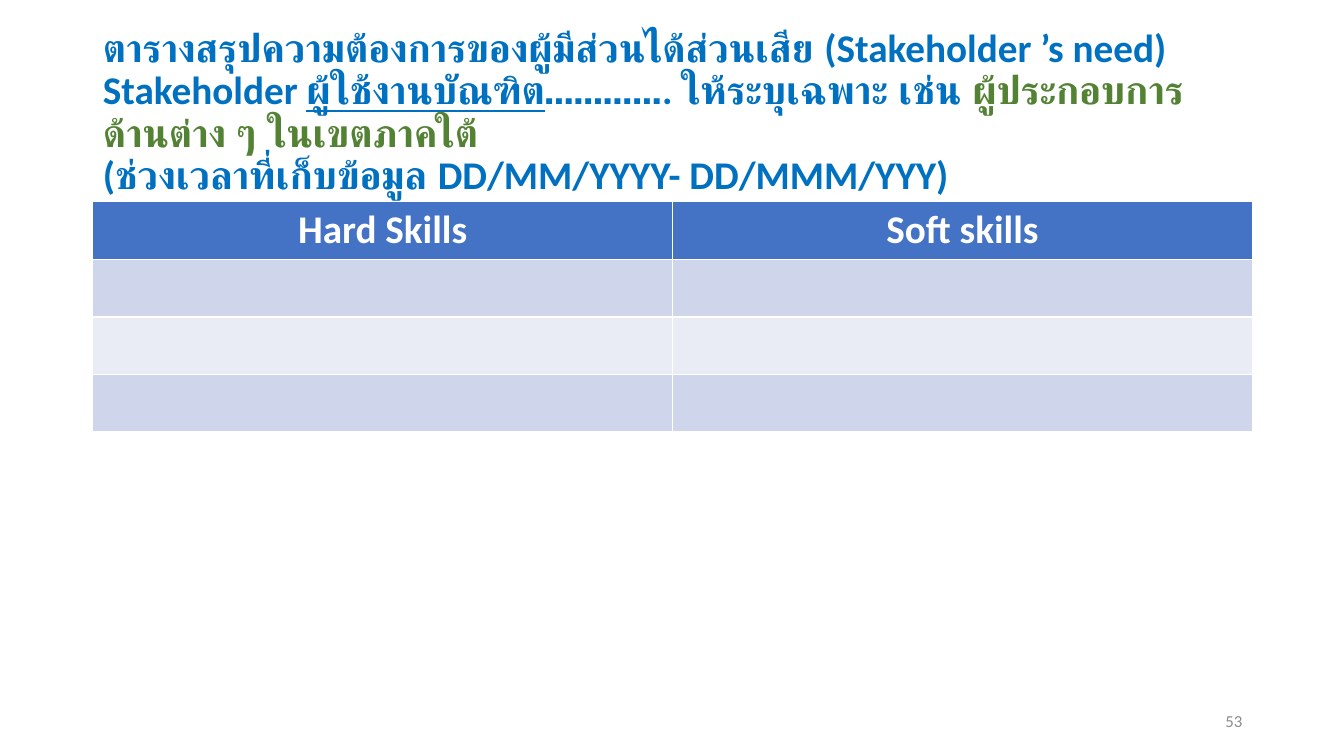
from dataclasses import dataclass

from pptx import Presentation
from pptx.dml.color import RGBColor
from pptx.enum.text import MSO_ANCHOR as Anchor, MSO_AUTO_SIZE as AutoSize, PP_ALIGN as Align
from pptx.slide import Slide
from pptx.util import Inches, Pt

COLORS = {
    "blue": "0070C0",
    "green": "548235",
    "header": "4472C4",
    "band_dark": "CFD5EA",
    "band_light": "E9EBF5",
    "white": "FFFFFF",
    "gray": "8C8C8C",
}
FONT = "Calibri"
LEFT, WIDTH = 0.92, 11.5
SKILL_GROUPS = ["Hard Skills", "Soft skills"]
ROW_FILLS = ["header", "band_dark", "band_light", "band_dark"]
ROW_HEIGHT = 0.57


@dataclass(frozen=True)
class Phrase:
    text: str
    color: str = "blue"
    underline: bool = False
    ends_line: bool = False


HEADING = [
    Phrase("ตารางสรุปความต้องการของผู้มีส่วนได้ส่วนเสีย (Stakeholder ’s need)", ends_line=True),
    Phrase("Stakeholder "),
    Phrase("ผู้ใช้งานบัณฑิต", underline=True),
    Phrase("…………. ให้ระบุเฉพาะ เช่น "),
    Phrase("ผู้ประกอบการด้านต่าง ๆ ในเขตภาคใต้", color="green", ends_line=True),
    Phrase("(ช่วงเวลาที่เก็บข้อมูล DD/MM/YYYY- DD/MMM/YYY)"),
]


def rgb(name: str) -> RGBColor:
    return RGBColor.from_string(COLORS[name])


def style_paragraph(paragraph, size: int, color: str, align: Align, bold: bool = False) -> None:
    paragraph.alignment = align
    font = paragraph.font
    font.name, font.size, font.bold = FONT, Pt(size), bold
    font.color.rgb = rgb(color)


def add_heading(slide: Slide) -> None:
    heading = slide.shapes.title
    heading.left, heading.top = Inches(LEFT), Inches(0.4)
    heading.width, heading.height = Inches(WIDTH), Inches(1.45)
    frame = heading.text_frame
    frame.word_wrap = True
    frame.auto_size = AutoSize.NONE
    frame.vertical_anchor = Anchor.MIDDLE
    paragraph = frame.paragraphs[0]
    style_paragraph(paragraph, 28, "blue", Align.LEFT, bold=True)
    paragraph.line_spacing = 0.9
    for phrase in HEADING:
        run = paragraph.add_run()
        run.text = phrase.text
        run.font.color.rgb = rgb(phrase.color)
        run.font.underline = phrase.underline
        if phrase.ends_line:
            paragraph.add_line_break()


def add_skills_table(slide: Slide) -> None:
    skills = slide.shapes.add_table(
        len(ROW_FILLS), len(SKILL_GROUPS), Inches(LEFT), Inches(2),
        Inches(WIDTH), Inches(ROW_HEIGHT * len(ROW_FILLS)),
    ).table
    for row, fill in zip(skills.rows, ROW_FILLS):
        row.height = Inches(ROW_HEIGHT)
        for cell in row.cells:
            cell.fill.solid()
            cell.fill.fore_color.rgb = rgb(fill)
    for column, group in enumerate(SKILL_GROUPS):
        header = skills.cell(0, column)
        header.text = group
        style_paragraph(header.text_frame.paragraphs[0], 28, "white", Align.CENTER, bold=True)


def add_page_number(slide: Slide, number: str) -> None:
    frame = slide.shapes.add_textbox(Inches(9.42), Inches(6.95), Inches(3), Inches(0.4)).text_frame
    frame.word_wrap = True
    frame.vertical_anchor = Anchor.MIDDLE
    frame.text = number
    style_paragraph(frame.paragraphs[0], 12, "gray", Align.RIGHT)


def main() -> None:
    """Build the stakeholder needs slide and save it."""
    deck = Presentation()
    deck.slide_width, deck.slide_height = Inches(13.33), Inches(7.5)
    slide = deck.slides.add_slide(deck.slide_layouts.get_by_name("Title Only"))
    add_heading(slide)
    add_skills_table(slide)
    add_page_number(slide, "53")
    deck.save("out.pptx")


if __name__ == "__main__":
    main()
